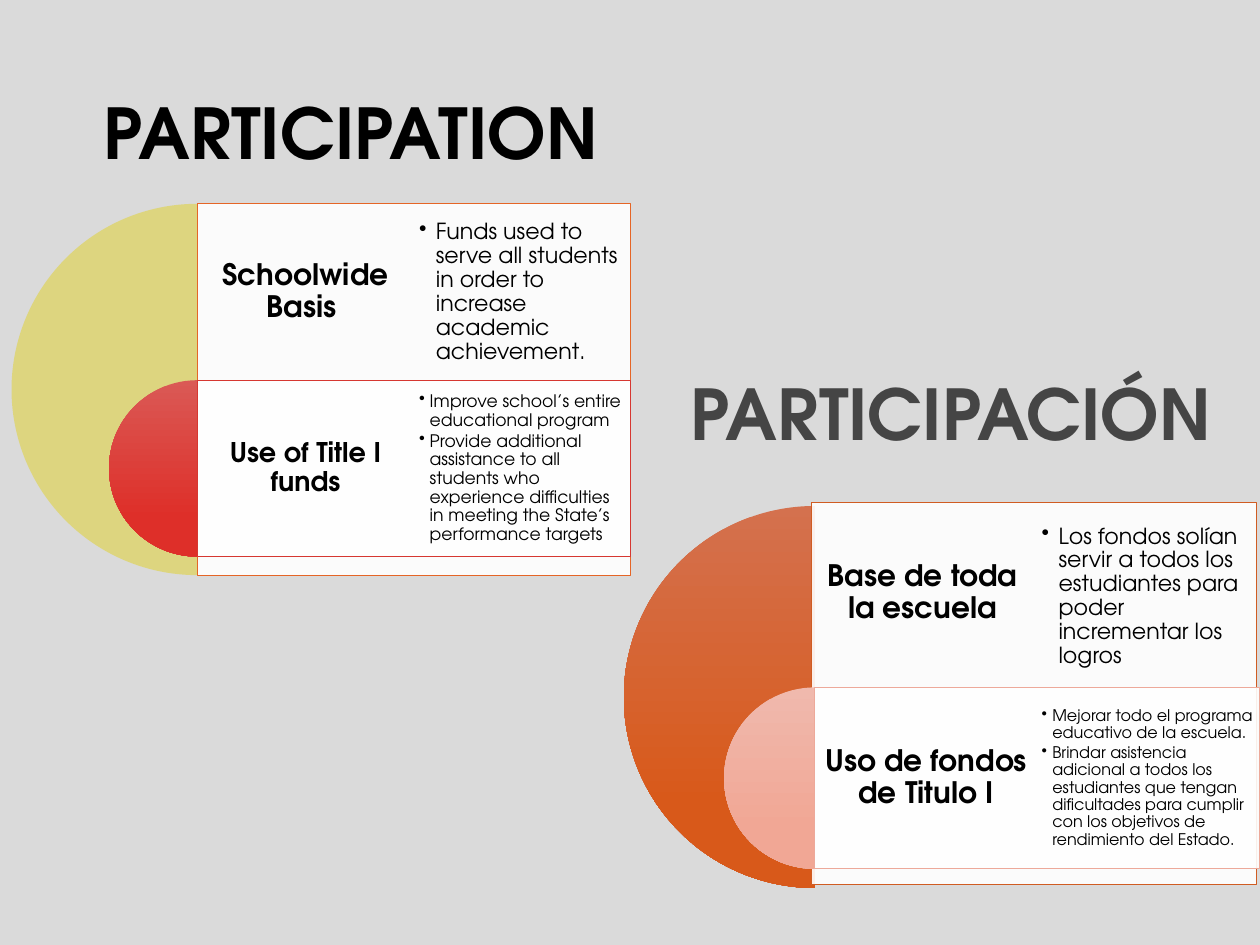
from lxml.etree import SubElement
from pptx import Presentation
from pptx.dml.color import RGBColor
from pptx.enum.shapes import MSO_SHAPE
from pptx.enum.text import MSO_ANCHOR, PP_ALIGN
from pptx.oxml.ns import qn
from pptx.util import Inches, Pt

COLUMNS, ROWS = 96, 72
CELL = Inches(14.22) / COLUMNS
FONT = "TeX Gyre Adventor"
ROW_SHARE = 0.475

BLACK = RGBColor(0x00, 0x00, 0x00)
WHITE = RGBColor(0xFF, 0xFF, 0xFF)
BACKDROP = RGBColor(0xDA, 0xDA, 0xDA)
CHARCOAL = RGBColor(0x45, 0x45, 0x45)
YELLOW = RGBColor(0xE1, 0xD1, 0x26)
ORANGE = RGBColor(0xE5, 0x65, 0x26)
RED_TOP = RGBColor(0xDA, 0x59, 0x55)
RED = RGBColor(0xDE, 0x2F, 0x29)
RED_EDGE = RGBColor(0xD6, 0x37, 0x31)
RUST_TOP = RGBColor(0xD4, 0x71, 0x4E)
RUST = RGBColor(0xD8, 0x59, 0x1A)
RUST_EDGE = RGBColor(0xD0, 0x5C, 0x22)
PINK_TOP = RGBColor(0xF0, 0xB9, 0xAD)
PINK = RGBColor(0xF1, 0xA7, 0x95)
PINK_EDGE = RGBColor(0xED, 0xA9, 0x9A)

ENGLISH = [
    dict(heading="Schoolwide Basis ", heading_size=24, inset=0.1,
         colours=[YELLOW], edge=ORANGE, detail_size=18, hang=0.19,
         details=["Funds used to serve all students in order to increase "
                  "academic achievement."]),
    dict(heading="Use of Title I funds", heading_size=22, inset=0.09,
         colours=[RED_TOP, RED], edge=RED_EDGE, detail_size=14, hang=0.12,
         details=["Improve school’s entire educational program",
                  "Provide additional assistance to all students who experience "
                  "difficulties in meeting the State’s performance targets"]),
]
SPANISH = [
    dict(heading="Base de toda la escuela", heading_size=24, inset=0.1,
         colours=[RUST_TOP, RUST], edge=RUST_EDGE, detail_size=18, hang=0.19,
         details=["Los fondos solían servir a todos los estudiantes para poder "
                  "incrementar los logros"]),
    dict(heading="Uso de fondos de Titulo I", heading_size=24, inset=0.1,
         colours=[PINK_TOP, PINK], edge=PINK_EDGE, detail_size=13, hang=0.12,
         details=["Mejorar todo el programa educativo de la escuela.",
                  "Brindar asistencia adicional a todos los estudiantes que tengan "
                  "dificultades para cumplir con los objetivos de rendimiento del "
                  "Estado."]),
]


def cells(*counts):
    return [round(count * CELL) for count in counts]


def set_opacity(fill_owner, share):
    colour = fill_owner._element.spPr.find(qn("a:solidFill"))[0]
    SubElement(colour, qn("a:alpha"), val=str(round(share * 100000)))


def add_bullet(paragraph, hang):
    properties = paragraph._p.get_or_add_pPr()
    properties.set("marL", str(Inches(hang)))
    properties.set("indent", str(-Inches(hang)))
    SubElement(properties, qn("a:buChar"), char="•")


def add_text(shapes, place, lines, *, size, colour=BLACK, bold=False,
             align=PP_ALIGN.LEFT, anchor=MSO_ANCHOR.MIDDLE, inset=None,
             spacing=0.9, after=0, hang=None):
    box = shapes.add_textbox(*cells(*place))
    frame = box.text_frame
    frame.word_wrap = True
    frame.vertical_anchor = anchor
    if inset is not None:
        frame.margin_left = frame.margin_right = Inches(inset)
        frame.margin_top = frame.margin_bottom = Inches(inset)
    for index, line in enumerate(lines):
        paragraph = frame.add_paragraph() if index else frame.paragraphs[0]
        if hang:
            add_bullet(paragraph, hang)
            paragraph.level = 1
        paragraph.alignment = align
        paragraph.line_spacing = spacing
        paragraph.space_after = Pt(round(after * size, 1))
        run = paragraph.add_run()
        run.text = line
        run.font.name = FONT
        run.font.size = Pt(size)
        run.font.bold = bold
        run.font.color.rgb = colour


def add_half_disc(shapes, left, top, diameter, colours):
    disc = shapes.add_shape(MSO_SHAPE.PIE, *cells(left, top, diameter, diameter))
    disc.adjustments[0] = 54
    disc.adjustments[1] = 162
    disc.shadow.inherit = False
    disc.line.fill.background()
    if len(colours) == 1:
        disc.fill.solid()
        disc.fill.fore_color.rgb = colours[0]
        set_opacity(disc, 0.5)
        return
    disc.fill.gradient()
    disc.fill.gradient_angle = 270
    for stop, colour, position in zip(disc.fill.gradient_stops, colours, (0, 0.78)):
        stop.color.rgb = colour
        stop.position = position


def add_panel(shapes, place, edge):
    panel = shapes.add_shape(MSO_SHAPE.RECTANGLE, *cells(*place))
    panel.shadow.inherit = False
    panel.fill.solid()
    panel.fill.fore_color.rgb = WHITE
    set_opacity(panel, 0.9)
    panel.line.color.rgb = edge
    panel.line.width = Pt(0.75)


def add_target(slide, topics, left, top, diameter, width, detail_inset, shift=0):
    shapes = slide.shapes.add_group_shape().shapes
    centre = left + diameter / 2
    row = diameter * ROW_SHARE
    half = width / 2
    for index, topic in enumerate(topics):
        disc = row if index else diameter
        nudge = 0 if index else shift
        row_top = top + index * row
        panel_left, panel_top = centre - nudge, row_top - nudge
        add_half_disc(shapes, centre - disc / 2, row_top, disc, topic["colours"])
        add_panel(shapes, (panel_left, panel_top, width, disc), topic["edge"])
        add_text(shapes, (panel_left, panel_top, half, row), [topic["heading"]],
                 size=topic["heading_size"], bold=True, align=PP_ALIGN.CENTER,
                 inset=topic["inset"], after=0.35)
    for index, topic in enumerate(topics):
        add_text(shapes, (centre + half, top + index * row, half, row),
                 topic["details"], size=topic["detail_size"],
                 inset=detail_inset, after=0.15, hang=topic["hang"])


def main():
    deck = Presentation()
    deck.slide_width, deck.slide_height = cells(COLUMNS, ROWS)
    slide = deck.slides.add_slide(deck.slide_layouts[6])
    slide.background.fill.solid()
    slide.background.fill.fore_color.rgb = BACKDROP

    add_text(slide.shapes, (0.68, 6.21, 45.57, 8.44), ["PARTICIPATION"],
             size=56.9, bold=True, align=PP_ALIGN.RIGHT)
    add_target(slide, ENGLISH, left=0.88, top=15.53, diameter=28.29, width=33,
               detail_inset=0.06)
    add_target(slide, SPANISH, left=47.53, top=38.55, diameter=29.1, width=33.9,
               detail_inset=0.05, shift=0.27)
    add_text(slide.shapes, (51.98, 27.88, 43.88, 7.09), ["PARTICIPACIÓN"],
             size=56.9, colour=CHARCOAL, bold=True, anchor=MSO_ANCHOR.TOP,
             spacing=1.0)
    deck.save("out.pptx")


if __name__ == "__main__":
    main()
